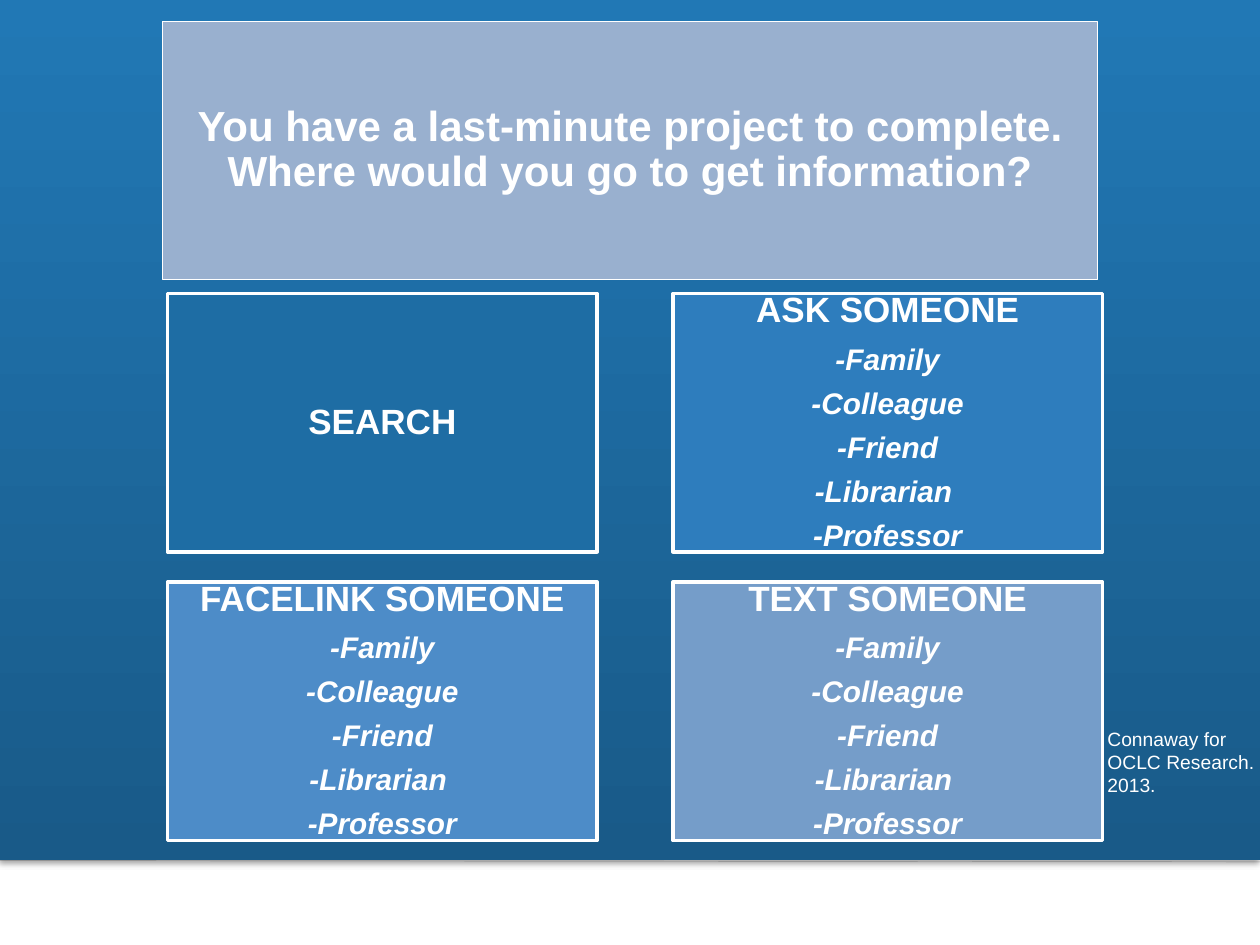
from dataclasses import dataclass

from lxml import etree
from pptx import Presentation
from pptx.dml.color import RGBColor
from pptx.enum.shapes import MSO_CONNECTOR, MSO_SHAPE
from pptx.enum.text import MSO_ANCHOR, PP_ALIGN
from pptx.oxml import parse_xml
from pptx.oxml.ns import qn
from pptx.util import Inches, Pt

WHITE = RGBColor(0xFF, 0xFF, 0xFF)
GREY = RGBColor(0xBF, 0xBF, 0xBF)
BAND_DARK = RGBColor(0x19, 0x5A, 0x88)
BAND_LIGHT = RGBColor(0x21, 0x78, 0xB5)
TITLE_FILL = RGBColor(0x99, 0xB0, 0xCF)
SEARCH_FILL = RGBColor(0x1E, 0x6D, 0xA4)
ASK_FILL = RGBColor(0x2E, 0x7D, 0xBD)
SOCIAL_FILL = RGBColor(0x4D, 0x8C, 0xC8)
TEXT_FILL = RGBColor(0x75, 0x9D, 0xC9)

FONT = "Arial"
BAND_H = 6.83
BOX_H = 2.05
CARD_W = 3.41
CARD_X, CARD_Y = 1.33, 2.33
STEP_X, STEP_Y = 4.01, 2.29
PEOPLE = ("-Family", "-Colleague", "-Friend", "-Librarian ", "-Professor")

SHADOW = (
    '<a:effectLst xmlns:a="http://schemas.openxmlformats.org/drawingml/2006/main">'
    '<a:outerShdw blurRad="39370" dist="22860" dir="5400000" rotWithShape="0">'
    '<a:srgbClr val="000000"><a:alpha val="35000"/></a:srgbClr>'
    "</a:outerShdw></a:effectLst>"
)


@dataclass
class Box:
    heading: str
    fill: RGBColor
    x: float
    y: float
    w: float = CARD_W
    size: float = 20
    line: float = 2
    inset: float = 0.08
    items: tuple[str, ...] = ()


def add_run(p, text: str, size: float, bold: bool = False, italic: bool = False) -> None:
    r = p.add_run()
    r.text = text
    r.font.name = FONT
    r.font.size = Pt(size)
    r.font.bold = bold
    r.font.italic = italic
    r.font.color.rgb = WHITE


def add_box(s, box: Box) -> None:
    sp = s.shapes.add_shape(MSO_SHAPE.RECTANGLE, Inches(box.x), Inches(box.y),
                            Inches(box.w), Inches(BOX_H))
    sp.shadow.inherit = False
    sp.fill.solid()
    sp.fill.fore_color.rgb = box.fill
    sp.line.color.rgb = WHITE
    sp.line.width = Pt(box.line)

    tf = sp.text_frame
    tf.word_wrap = True
    tf.vertical_anchor = MSO_ANCHOR.MIDDLE
    tf.margin_left = tf.margin_right = Inches(box.inset)
    tf.margin_top = tf.margin_bottom = Inches(box.inset)
    for i, text in enumerate((box.heading, *box.items)):
        p = tf.paragraphs[0] if i == 0 else tf.add_paragraph()
        size = 17 if i else box.size
        p.alignment = PP_ALIGN.CENTER
        p.line_spacing = 0.9
        p.space_after = Pt(0.4 * size)
        add_run(p, text, size, bold=True, italic=i > 0)


def add_band(s) -> None:
    line = s.shapes.add_connector(MSO_CONNECTOR.STRAIGHT, 0, Inches(BAND_H),
                                  Inches(10), Inches(6.84))
    line.line.color.rgb = GREY
    line.line.width = Pt(0.25)
    etree.SubElement(line._element.spPr, qn("a:effectLst"))

    sp = s.shapes.add_shape(MSO_SHAPE.RECTANGLE, 0, 0, Inches(10), Inches(BAND_H))
    sp.fill.gradient()
    sp.fill.gradient_angle = 90
    for stop, color in zip(sp.fill.gradient_stops, (BAND_DARK, BAND_LIGHT)):
        stop.color.rgb = color
    sp.line.fill.background()
    sp._element.spPr.append(parse_xml(SHADOW))


def add_credit(s) -> None:
    tf = s.shapes.add_textbox(Inches(8.69), Inches(5.72), Inches(1.42),
                              Inches(0.92)).text_frame
    tf.word_wrap = True
    add_run(tf.paragraphs[0], "Connaway for OCLC Research. 2013.", 11)


def main() -> None:
    prs = Presentation()
    prs.slide_width, prs.slide_height = Inches(10), Inches(7.5)
    s = prs.slides.add_slide(prs.slide_layouts[6])

    # Background band
    add_band(s)

    # Question
    add_box(s, Box("You have a last-minute project to complete. "
                   "Where would you go to get information?",
                   TITLE_FILL, 1.29, 0.17, w=7.42, size=24, line=0.25, inset=0.1))

    # Answers in a two by two grid
    answers = (
        ("SEARCH", SEARCH_FILL, ()),
        ("ASK SOMEONE", ASK_FILL, PEOPLE),
        ("FACELINK SOMEONE", SOCIAL_FILL, PEOPLE),
        ("TEXT SOMEONE", TEXT_FILL, PEOPLE),
    )
    for i, (heading, fill, items) in enumerate(answers):
        row, col = divmod(i, 2)
        add_box(s, Box(heading, fill, CARD_X + col * STEP_X, CARD_Y + row * STEP_Y,
                       items=items))

    # Credit
    add_credit(s)
    prs.save("out.pptx")


if __name__ == "__main__":
    main()
